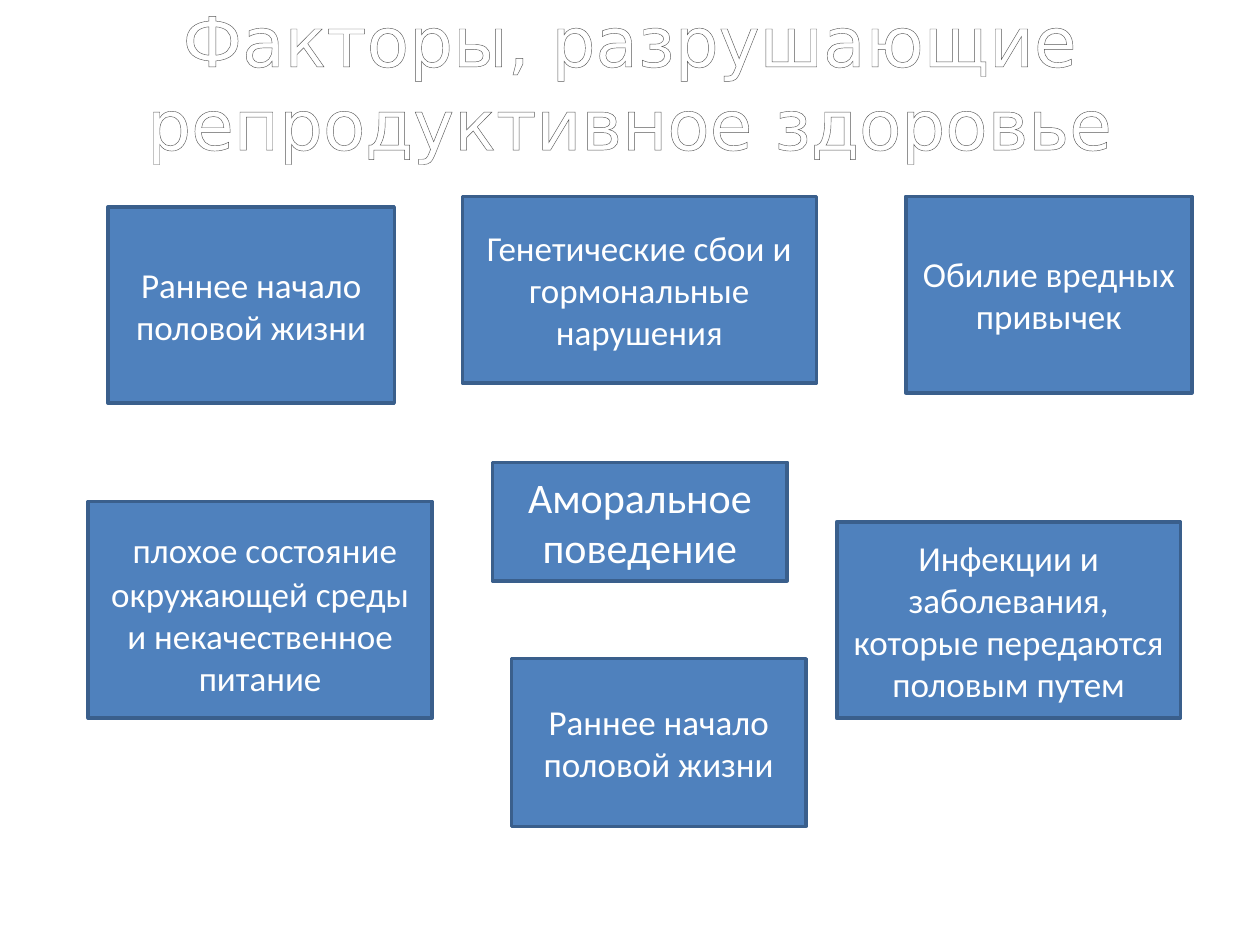
from lxml import etree
from pptx import Presentation
from pptx.dml.color import RGBColor
from pptx.enum.shapes import MSO_SHAPE
from pptx.enum.text import MSO_ANCHOR, MSO_AUTO_SIZE, PP_ALIGN
from pptx.oxml.ns import qn
from pptx.util import Cm, Pt

RECTANGLE = MSO_SHAPE.RECTANGLE
MIDDLE = MSO_ANCHOR.MIDDLE
NO_AUTOFIT = MSO_AUTO_SIZE.NONE
CENTER = PP_ALIGN.CENTER
TITLE_ONLY = 5

COLORS = {
    "box": "4F81BD",
    "border": "3A5F8C",
    "text": "FFFFFF",
    "outline": "595959",
}

TITLE = "Факторы, разрушающие репродуктивное здоровье"

# (left, top, width, height) in centimetres, then (text, size) spans
FACTORS = [
    ((2.18, 4.17, 5.77, 3.96), [("Раннее начало половой жизни", 20)]),
    ((9.93, 9.32, 5.94, 2.39), [("Аморальное поведение", 24)]),
    ((1.78, 10.11, 6.93, 4.37), [
        (" ", 24),
        ("плохое состояние окружающей среды и некачественное питание", 20),
    ]),
    ((16.87, 10.52, 6.93, 3.96),
     [("Инфекции и заболевания, которые передаются половым путем", 20)]),
    ((9.32, 3.96, 7.14, 3.76),
     [("Генетические сбои и гормональные нарушения", 20)]),
    ((10.31, 13.28, 5.94, 3.38), [("Раннее начало половой жизни", 20)]),
    ((18.26, 3.96, 5.77, 3.96), [("Обилие вредных привычек", 20)]),
]


def color(name):
    return RGBColor.from_string(COLORS[name])


def set_values(target, values):
    for name, value in values.items():
        setattr(target, name, value)


class FactorSlide:
    """Holds the text style and the slide being filled."""

    frame_format = {"word_wrap": True, "auto_size": NO_AUTOFIT,
                    "vertical_anchor": MIDDLE}

    def __init__(self, deck):
        self.slide = deck.slides.add_slide(deck.slide_layouts[TITLE_ONLY])

    def add_text(self, shape, spans, font_name):
        frame = shape.text_frame
        set_values(frame, self.frame_format)
        para = frame.paragraphs[0]
        para.alignment = CENTER
        for text, size in spans:
            span = para.add_run()
            span.text = text
            set_values(span.font, {"name": font_name, "size": Pt(size)})
            span.font.color.rgb = color("text")
        return para

    def title(self, text):
        title = self.slide.shapes.title
        set_values(title, {"left": Cm(1.27), "top": Cm(0.76),
                           "width": Cm(22.86), "height": Cm(3.18)})
        para = self.add_text(title, [(text, 39.6)], "DejaVu Sans")
        title.text_frame.margin_bottom = Cm(1.57)
        self.outline(para.runs[0])

    def outline(self, span):
        """Draw a thin line around the letters."""
        line = etree.Element(qn("a:ln"), w=str(Pt(1.45)))
        fill = etree.SubElement(line, qn("a:solidFill"))
        etree.SubElement(fill, qn("a:srgbClr"), val=COLORS["outline"])
        span.font._element.insert(0, line)

    def box(self, place, spans):
        box = self.slide.shapes.add_shape(RECTANGLE, *map(Cm, place))
        box.shadow.inherit = False
        box.fill.solid()
        box.fill.fore_color.rgb = color("box")
        box.line.color.rgb = color("border")
        box.line.width = Pt(2)
        self.add_text(box, spans, "Calibri")


def main():
    deck = Presentation()
    set_values(deck, {"slide_width": Cm(25.4), "slide_height": Cm(19.05)})
    page = FactorSlide(deck)
    page.title(TITLE)
    for place, spans in FACTORS:
        page.box(place, spans)
    deck.save("out.pptx")


if __name__ == "__main__":
    main()
